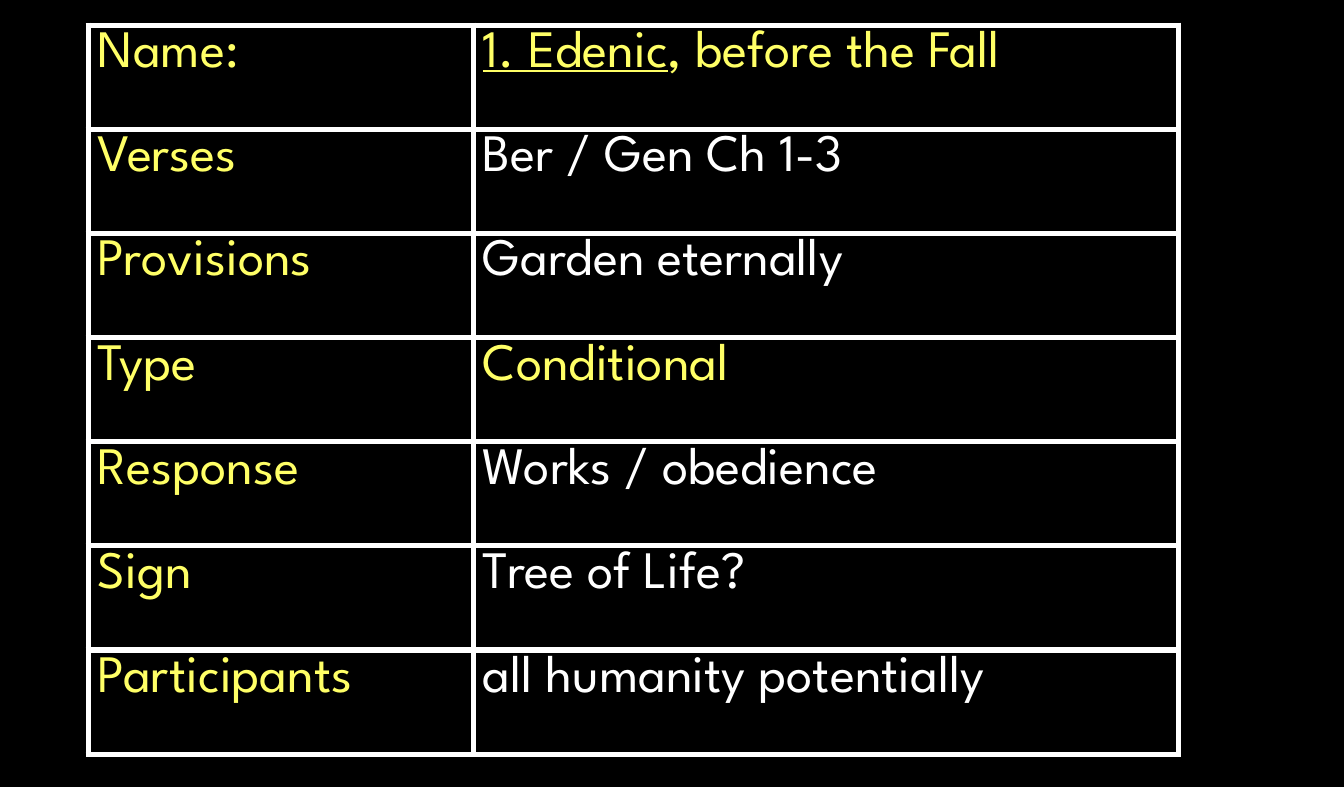
from dataclasses import dataclass

from lxml.etree import SubElement
from pptx import Presentation
from pptx.dml.color import RGBColor
from pptx.oxml.ns import qn
from pptx.util import Inches, Pt


@dataclass(frozen=True)
class Theme:
    font: str = "League Spartan"
    size: float = 27
    back: str = "000000"
    label: str = "FFFF66"
    plain: str = "FFFFFF"
    rule: str = "FFFFFF"
    width: float = 3


THEME = Theme()
WIDE, HIGH = 9.6, 5.62
LEFT, TOP = 0.63, 0.18
COLS = (2.75, 5.04)
ROW = 0.744

# Each row: label, underlined lead, remaining value, value colour
ROWS = (
    ("Name:", "1. Edenic", ", before the Fall", THEME.label),
    ("Verses", "", "Ber / Gen Ch 1-3", THEME.plain),
    ("Provisions", "", "Garden eternally", THEME.plain),
    ("Type", "", "Conditional", THEME.label),
    ("Response", "", "Works / obedience", THEME.plain),
    ("Sign", "", "Tree of Life?", THEME.plain),
    ("Participants", "", "all humanity potentially", THEME.plain),
)


def rule_cell(cell):
    """Draw all four borders; they must follow one another before the fill."""
    props = cell._tc.get_or_add_tcPr()
    for place, side in enumerate(("lnL", "lnR", "lnT", "lnB")):
        line = SubElement(props, qn(f"a:{side}"), w=str(Pt(THEME.width)))
        fill = SubElement(line, qn("a:solidFill"))
        SubElement(fill, qn("a:srgbClr"), val=THEME.rule)
        props.insert(place, line)


def fill_cell(cell, text, color, lead=""):
    """Write text, after an underlined lead if there is one."""
    cell.fill.background()
    cell.margin_left = cell.margin_right = Inches(0.07)
    cell.margin_top = cell.margin_bottom = Inches(0.04)
    para = cell.text_frame.paragraphs[0]
    if lead:
        run = para.add_run()
        run.text = lead
        run.font.underline = True
    para.add_run().text = text
    font = para.font
    font.name, font.size, font.bold = THEME.font, Pt(THEME.size), False
    font.color.rgb = RGBColor.from_string(color)
    rule_cell(cell)


def add_grid(slide):
    frame = slide.shapes.add_table(
        len(ROWS), len(COLS), Inches(LEFT), Inches(TOP),
        Inches(sum(COLS)), Inches(ROW * len(ROWS)),
    )
    table = frame.table
    table.first_row = table.horz_banding = False
    for col, width in zip(table.columns, COLS):
        col.width = Inches(width)
    for row, (label, lead, value, color) in zip(table.rows, ROWS):
        row.height = Inches(ROW)
        fill_cell(row.cells[0], label, THEME.label)
        fill_cell(row.cells[1], value, color, lead)


def main():
    deck = Presentation()
    deck.slide_width, deck.slide_height = Inches(WIDE), Inches(HIGH)
    slide = deck.slides.add_slide(deck.slide_layouts[6])
    fill = slide.background.fill
    fill.solid()
    fill.fore_color.rgb = RGBColor.from_string(THEME.back)
    add_grid(slide)
    deck.save("out.pptx")


if __name__ == "__main__":
    main()
